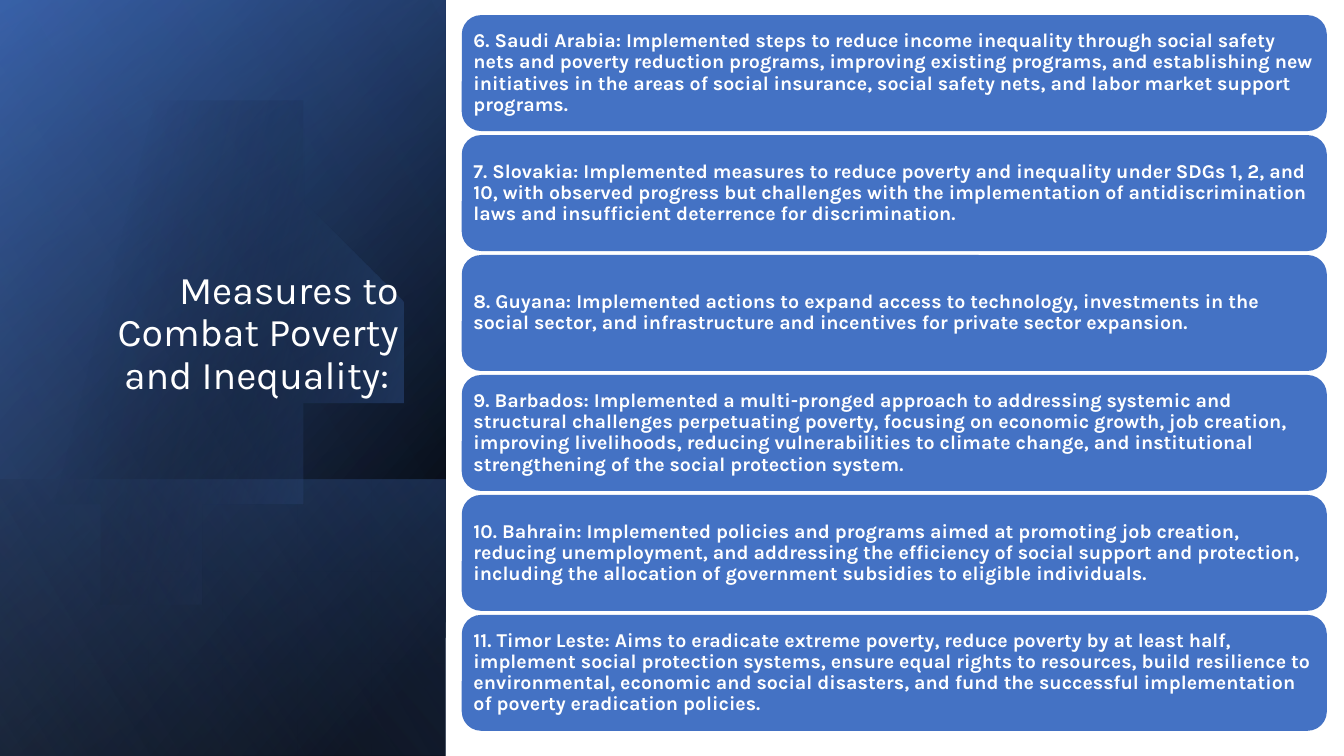
"""Build the slide on measures to combat poverty and inequality."""
import pptx
import pptx.dml.color
import pptx.enum.shapes
import pptx.enum.text
import pptx.oxml
import pptx.oxml.ns
import pptx.util

Inches = pptx.util.Inches
RGBColor = pptx.dml.color.RGBColor
Shape = pptx.enum.shapes.MSO_SHAPE
Anchor = pptx.enum.text.MSO_ANCHOR
Align = pptx.enum.text.PP_ALIGN

WHITE = RGBColor(0xFF, 0xFF, 0xFF)
BLACK = RGBColor(0x00, 0x00, 0x00)
BLUE = RGBColor(0x44, 0x72, 0xC4)
DEEP_BLUE = RGBColor(0x2F, 0x55, 0x97)
PALE_BLUE = RGBColor(0x8F, 0xAA, 0xDC)

TITLE = "Measures to Combat Poverty and Inequality: \v"
MEASURES = [
    "6. Saudi Arabia: Implemented steps to reduce income inequality through social safety nets and poverty reduction programs, improving existing programs, and establishing new initiatives in the areas of social insurance, social safety nets, and labor market support programs.",
    "7. Slovakia: Implemented measures to reduce poverty and inequality under SDGs 1, 2, and 10, with observed progress but challenges with the implementation of antidiscrimination laws and insufficient deterrence for discrimination.",
    "8. Guyana: Implemented actions to expand access to technology, investments in the social sector, and infrastructure and incentives for private sector expansion.",
    "9. Barbados: Implemented a multi-pronged approach to addressing systemic and structural challenges perpetuating poverty, focusing on economic growth, job creation, improving livelihoods, reducing vulnerabilities to climate change, and institutional strengthening of the social protection system.",
    "10. Bahrain: Implemented policies and programs aimed at promoting job creation, reducing unemployment, and addressing the efficiency of social support and protection, including the allocation of government subsidies to eligible individuals.",
    "11. Timor Leste: Aims to eradicate extreme poverty, reduce poverty by at least half, implement social protection systems, ensure equal rights to resources, build resilience to environmental, economic and social disasters, and fund the successful implementation of poverty eradication policies.",
]
CARD_TOP, CARD_PITCH = 0.15, 1.19

PANEL = (-1.54, 1.54, 7.5, 4.42)
LOWER_PANEL = (0.84, 3.92, 2.74, 4.42)

DISC_START = (1.49, 1.1)
DISC_CURVES = [
    [(2.46, 1.12), (3.35, 1.77), (3.63, 2.75)],
    [(3.98, 3.97), (3.28, 5.23), (2.07, 5.58)],
    [(1.31, 5.8), (0.53, 5.61), (-0.03, 5.14)],
    [(-0.15, 5.03)],
    [(-0.15, 1.75)],
    [(0, 1.61)],
    [(0.23, 1.42), (0.5, 1.28), (0.8, 1.19)],
    [(1.03, 1.13), (1.26, 1.1), (1.49, 1.1)],
]


def outline(start, segments, steps=24):
    """Return the points along straight and cubic segments."""
    points = [start]
    for segment in segments:
        if len(segment) == 1:
            points += segment
            continue
        corners = [points[-1], *segment]
        for step in range(1, steps + 1):
            t = step / steps
            weights = ((1 - t) ** 3, 3 * t * (1 - t) ** 2, 3 * t * t * (1 - t), t ** 3)
            points.append(tuple(
                sum(weight * corner[axis] for weight, corner in zip(weights, corners))
                for axis in (0, 1)))
    return points


class Painter:
    """Hold the style and the current slide."""

    font = "Karla"
    text_color = WHITE

    def __init__(self, page):
        """Keep the slide to draw on."""
        self.page = page

    def gradient(self, shape, stops, angle):
        """Fill a shape with a linear gradient of (position, colour, opacity) stops."""
        shape.shadow.inherit = False
        shape.line.fill.background()
        marks = "".join(
            f'<a:gs pos="{position * 1000}"><a:srgbClr val="{color}">'
            f'<a:alpha val="{opacity * 1000}"/></a:srgbClr></a:gs>'
            for position, color, opacity in stops)
        fill = pptx.oxml.parse_xml(
            f'<a:gradFill {pptx.oxml.ns.nsdecls("a")} rotWithShape="1">'
            f'<a:gsLst>{marks}</a:gsLst><a:lin ang="{angle * 60000}" scaled="0"/></a:gradFill>')
        properties = shape._element.spPr
        properties.insert(properties.index(properties.ln), fill)

    def panel(self, frame, stops, angle):
        """Add a turned and mirrored gradient rectangle."""
        shape = self.page.shapes.add_shape(Shape.RECTANGLE, *map(Inches, frame))
        shape.rotation = 90
        shape._element.spPr.xfrm.set("flipH", "1")
        self.gradient(shape, stops, angle)

    def disc(self, points, stops, angle):
        """Add a gradient outline through the given points."""
        builder = self.page.shapes.build_freeform(*points[0], scale=Inches(1))
        builder.add_line_segments(points[1:], close=True)
        self.gradient(builder.convert_to_shape(), stops, angle)

    def letter(self, box, text, size, align, anchor, bold=False):
        """Set and format the text of a box."""
        frame = box.text_frame
        frame.word_wrap = True
        frame.vertical_anchor = anchor
        para = frame.paragraphs[0]
        para.text = text
        para.alignment = align
        para.line_spacing = 0.9
        para.font.size = pptx.util.Pt(size)
        for span in para.runs:
            span.font.name = self.font
            span.font.size = pptx.util.Pt(size)
            span.font.bold = bold
            span.font.color.rgb = self.text_color

    def title(self, frame, text):
        """Add the right-aligned title."""
        box = self.page.shapes.add_textbox(*map(Inches, frame))
        self.letter(box, text, 28, Align.RIGHT, Anchor.BOTTOM)

    def card(self, frame, text):
        """Add a rounded card with bold text."""
        box = self.page.shapes.add_shape(Shape.ROUNDED_RECTANGLE, *map(Inches, frame))
        box.shadow.inherit = False
        box.fill.solid()
        box.fill.fore_color.rgb = BLUE
        box.line.fill.background()
        inner = box.text_frame
        inner.margin_left = inner.margin_right = Inches(0.06)
        inner.margin_top = inner.margin_bottom = Inches(0.06)
        self.letter(box, text, 14, Align.LEFT, Anchor.MIDDLE, bold=True)


def main():
    """Build and save the deck."""
    deck = pptx.Presentation()
    deck.slide_width, deck.slide_height = Inches(13.33), Inches(7.5)
    painter = Painter(deck.slides.add_slide(deck.slide_layouts[6]))

    painter.panel(PANEL, [(8, BLACK, 100), (100, DEEP_BLUE, 100)], 50)
    painter.panel(PANEL, [(0, BLACK, 0), (99, BLUE, 46)], 30)
    painter.panel(LOWER_PANEL, [(2, BLUE, 29), (100, BLACK, 30)], 130)
    painter.disc(outline(DISC_START, DISC_CURVES), [(29, BLACK, 0), (100, BLUE, 43)], 14)
    painter.panel(PANEL, [(0, BLACK, 0), (99, PALE_BLUE, 11)], 120)

    painter.title((0.64, 1.84, 3.41, 2.62), TITLE)
    for row, measure in enumerate(MEASURES):
        painter.card((4.58, CARD_TOP + row * CARD_PITCH, 8.58, 1.15), measure)

    deck.save("out.pptx")


if __name__ == "__main__":
    main()
